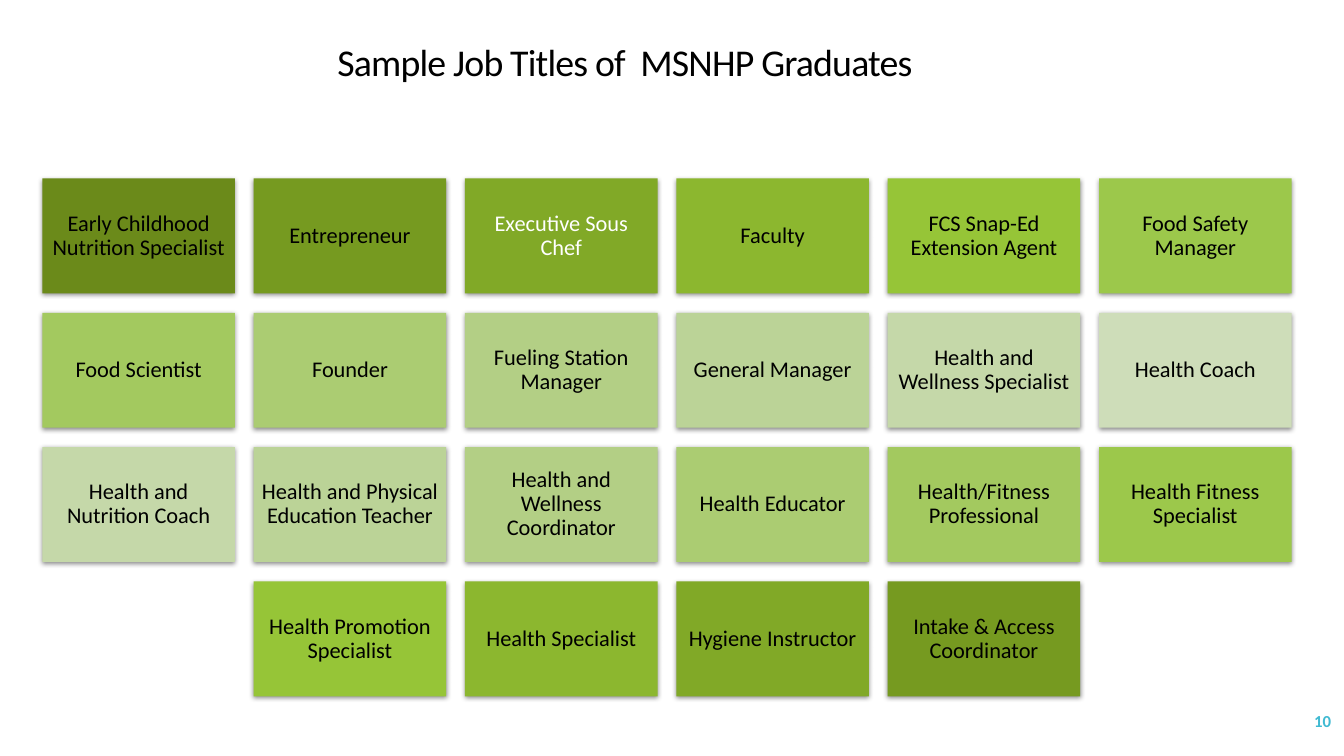
"""Build a slide with a grid of sample job titles in shades of green."""
from lxml import etree
from pptx import Presentation
from pptx.dml.color import RGBColor
from pptx.enum.shapes import MSO_SHAPE
from pptx.enum.text import MSO_ANCHOR, PP_ALIGN
from pptx.oxml.ns import qn
from pptx.util import Inches, Pt

RECTANGLE = MSO_SHAPE.RECTANGLE
MIDDLE = MSO_ANCHOR.MIDDLE
CENTER, RIGHT = PP_ALIGN.CENTER, PP_ALIGN.RIGHT

JOBS = [
    "Early Childhood Nutrition Specialist", "Entrepreneur",
    "Executive Sous Chef", "Faculty", "FCS Snap-Ed Extension Agent",
    "Food Safety Manager", "Food Scientist", "Founder",
    "Fueling Station Manager", "General Manager",
    "Health and Wellness Specialist", "Health Coach",
    "Health and Nutrition Coach", "Health and Physical Education Teacher",
    "Health and Wellness Coordinator", "Health Educator",
    "Health/Fitness Professional", "Health Fitness Specialist",
    "Health Promotion Specialist", "Health Specialist",
    "Hygiene Instructor", "Intake & Access Coordinator",
]
GREENS = ["6B8A1A", "769A20", "81A927", "8CB72F", "96C537", "9CC84B",
          "A3C95F", "ABCC72", "B3CF85", "BBD397", "C5D8A9", "CEDDB9"]
COLUMNS = 6
LEFT, TOP = 0.42, 1.77
WIDTH, HEIGHT = 1.91, 1.14
COLUMN_STEP, ROW_STEP = 2.096, 1.333


def color(value):
    return RGBColor.from_string(value)


def write(shape, text, size=16, fill="000000", bold=False, align=CENTER,
          spacing=0.9, inset=0.07, tracking=None):
    frame = shape.text_frame
    frame.word_wrap = True
    frame.vertical_anchor = MIDDLE
    frame.margin_left = frame.margin_right = Inches(inset)
    frame.margin_top = frame.margin_bottom = Inches(inset)
    para = frame.paragraphs[0]
    para.alignment = align
    para.line_spacing = spacing
    span = para.add_run()
    span.text = text
    span.font.name = "Calibri"
    span.font.size = Pt(size)
    span.font.bold = bold
    span.font.color.rgb = color(fill)
    if tracking is not None:
        span.font._element.set("spc", str(tracking))


deck = Presentation()
deck.slide_width, deck.slide_height = Inches(13.33), Inches(7.5)
page = deck.slides.add_slide(deck.slide_layouts[5])

title = page.shapes.title
title.left, title.top = Inches(0), Inches(0.4)
title.width, title.height = Inches(12.39), Inches(0.47)
write(title, "Sample Job Titles of  MSNHP Graduates", size=27, inset=0.05,
      tracking=-60)

for index, job in enumerate(JOBS):
    row, column = divmod(index, COLUMNS)
    row_length = min(COLUMNS, len(JOBS) - row * COLUMNS)
    column += (COLUMNS - row_length) / 2
    box = page.shapes.add_shape(
        RECTANGLE, Inches(LEFT + column * COLUMN_STEP),
        Inches(TOP + row * ROW_STEP), Inches(WIDTH), Inches(HEIGHT))
    box.fill.solid()
    box.fill.fore_color.rgb = color(GREENS[min(index, len(JOBS) - index)])
    box.line.fill.background()
    box.shadow.inherit = False
    effects = box._element.spPr.find(qn("a:effectLst"))
    shadow = etree.SubElement(effects, qn("a:outerShdw"), blurRad=str(Pt(3.5)),
                              dist=str(Pt(1.1)), dir="5400000", rotWithShape="0")
    shade = etree.SubElement(shadow, qn("a:srgbClr"), val="000000")
    etree.SubElement(shade, qn("a:alpha"), val="45000")
    write(box, job, fill="FFFFFF" if job == "Executive Sous Chef" else "000000")

number = page.shapes.add_textbox(Inches(11.63), Inches(6.95),
                                 Inches(1.67), Inches(0.4))
write(number, "10", size=12, fill="40BAD2", bold=True, align=RIGHT,
      spacing=1.0, inset=0.1)

deck.save("out.pptx")
